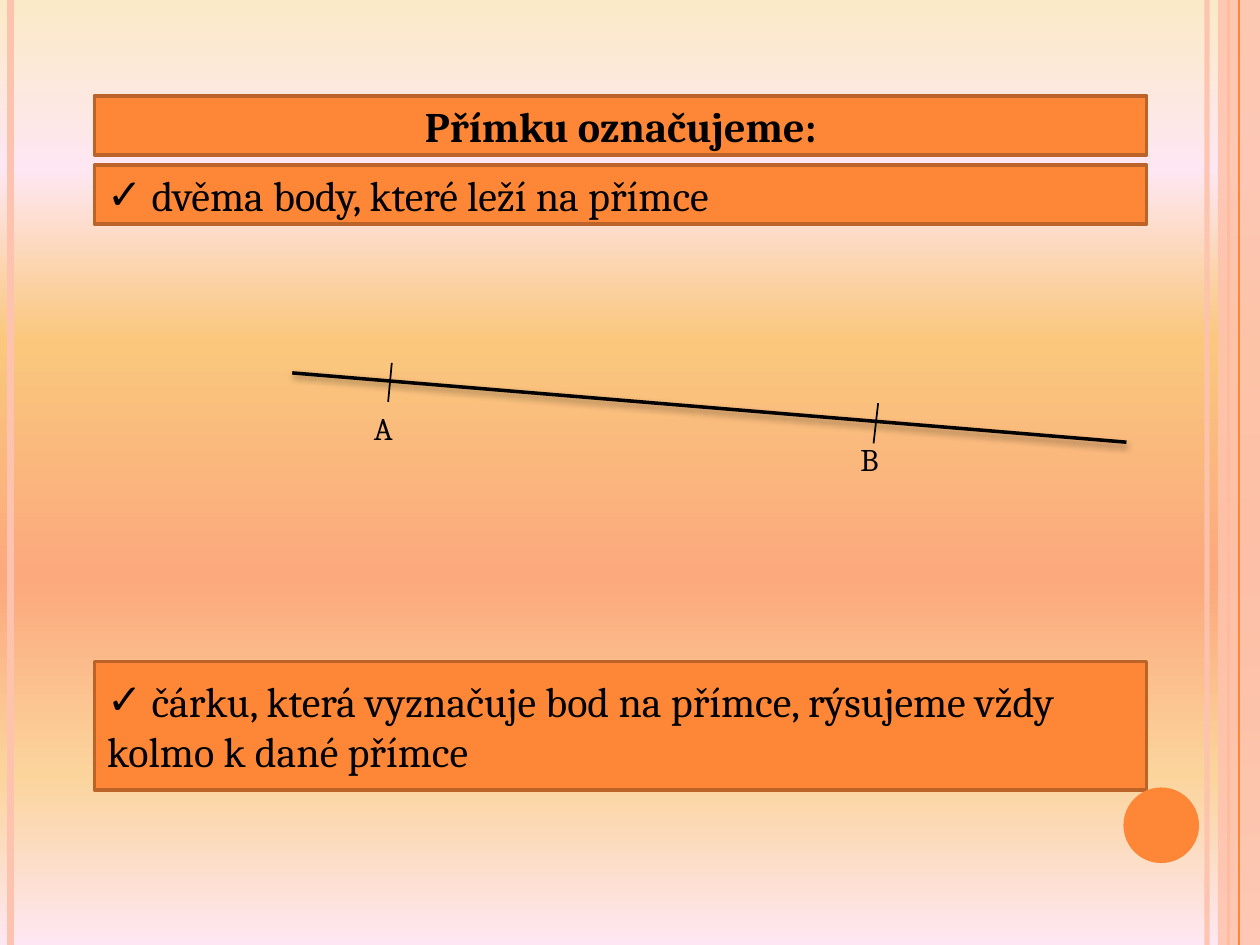
from dataclasses import dataclass

from lxml import etree
from pptx import Presentation
from pptx.dml.color import RGBColor
from pptx.enum import shapes, text
from pptx.oxml import ns
from pptx.util import Pt


@dataclass(frozen=True)
class Theme:
    font: str = "Cambria"
    heading_size: int = 24
    label_size: int = 18
    ink: str = "000000"
    accent: str = "FE8637"
    accent_dark: str = "BC6329"
    pale: str = "FEC3AE"
    # position in percent, colour, opacity in percent
    background: tuple = (
        (0, "FBEAC7", 100), (18, "FEE7F2", 100), (36, "FAC77D", 100),
        (61, "FBA97D", 100), (82, "FBD49C", 100), (100, "FEE7F2", 97),
    )


def add_xml(parent, tag, **attributes):
    values = {name: str(value) for name, value in attributes.items()}
    return etree.SubElement(parent, ns.qn(tag), values)


def add_colour(parent, colour, opacity=100):
    element = add_xml(parent, "a:srgbClr", val=colour)
    if opacity < 100:
        add_xml(element, "a:alpha", val=opacity * 1000)


def set_opacity(shape, opacity):
    if opacity < 100:
        for colour in shape.element.spPr.iter(ns.qn("a:srgbClr")):
            add_xml(colour, "a:alpha", val=opacity * 1000)


def write_text(frame, content, *, font, size, colour, bold=False,
               align=text.PP_ALIGN.LEFT, bullet=None):
    frame.text = content
    paragraph = frame.paragraphs[0]
    paragraph.alignment = align
    paragraph.space_before = Pt(0)
    style = paragraph.runs[0].font
    style.name, style.size, style.bold = font, Pt(size), bold
    style.color.rgb = RGBColor.from_string(colour)
    if bullet:
        properties = paragraph._p.get_or_add_pPr()
        properties.set("marL", "0")
        properties.set("indent", "0")
        add_xml(properties, "a:buClr").append(
            etree.Element(ns.qn("a:srgbClr"), val=colour))
        add_xml(properties, "a:buChar", char=bullet)


class SlideBuilder:
    def __init__(self, slide, theme):
        self.slide = slide
        self.theme = theme

    def background(self):
        fill = self.slide.background.fill
        fill.gradient()
        fill.gradient_angle = 270
        stops = self.slide.element.find(".//" + ns.qn("a:gsLst"))
        for stop in list(stops):
            stops.remove(stop)
        for position, colour, opacity in self.theme.background:
            stop = add_xml(stops, "a:gs", pos=position * 1000)
            add_colour(stop, colour, opacity)

    def line(self, start, end, colour, width, opacity=100, shadow=False):
        connector = self.slide.shapes.add_connector(
            shapes.MSO_CONNECTOR.STRAIGHT, *map(Pt, start + end))
        connector.line.color.rgb = RGBColor.from_string(colour)
        connector.line.width = Pt(width)
        set_opacity(connector, opacity)
        effects = add_xml(connector.element.spPr, "a:effectLst")
        if shadow:
            outer = add_xml(effects, "a:outerShdw", blurRad=Pt(4), dist=Pt(2),
                            dir=90 * 60000, rotWithShape=0)
            add_colour(outer, self.theme.ink, 40)

    def plain_shape(self, kind, box, colour, opacity=100):
        shape = self.slide.shapes.add_shape(kind, *map(Pt, box))
        shape.shadow.inherit = False
        shape.fill.solid()
        shape.fill.fore_color.rgb = RGBColor.from_string(colour)
        shape.line.fill.background()
        set_opacity(shape, opacity)

    def panel(self, placeholder, top, height, content, **text_format):
        """Turn a placeholder into a full-width framed box."""
        placeholder.left, placeholder.top = Pt(54), Pt(top)
        placeholder.width, placeholder.height = Pt(601.2), Pt(height)
        placeholder.fill.solid()
        placeholder.fill.fore_color.rgb = RGBColor.from_string(self.theme.accent)
        placeholder.line.color.rgb = RGBColor.from_string(self.theme.accent_dark)
        placeholder.line.width = Pt(2)
        frame = placeholder.text_frame
        frame.word_wrap = True
        frame.auto_size = text.MSO_AUTO_SIZE.NONE
        frame.vertical_anchor = text.MSO_ANCHOR.MIDDLE
        write_text(frame, content, font=self.theme.font, colour=self.theme.ink,
                   size=self.theme.heading_size, **text_format)

    def label(self, box, content):
        frame = self.slide.shapes.add_textbox(*map(Pt, box)).text_frame
        frame.word_wrap = True
        frame.auto_size = text.MSO_AUTO_SIZE.SHAPE_TO_FIT_TEXT
        write_text(frame, content, font=self.theme.font, colour=self.theme.ink,
                   size=self.theme.label_size)


def main():
    presentation = Presentation()
    presentation.slide_width, presentation.slide_height = Pt(720), Pt(540)
    slide = presentation.slides.add_slide(presentation.slide_layouts[3])
    theme = Theme()
    builder = SlideBuilder(slide, theme)
    builder.background()

    def edge_line(x, colour, width, opacity=100):
        builder.line((x, 0), (x, 540), colour, width, opacity)

    edge_line(689.8, theme.pale, 3, 93)
    edge_line(6, theme.pale, 4.5)
    edge_line(702, theme.accent, 1.5)
    builder.plain_shape(shapes.MSO_SHAPE.RECTANGLE, (696, 0, 24, 540), theme.pale, 87)
    edge_line(708, theme.accent, 0.75)
    builder.plain_shape(shapes.MSO_SHAPE.OVAL, (642, 450, 43.2, 43.2), theme.accent)

    title, naming_rule, drawing_rule = slide.placeholders
    builder.panel(title, 54.7, 33.8, "Přímku označujeme:",
                  bold=True, align=text.PP_ALIGN.CENTER)
    builder.panel(naming_rule, 94.3, 33.8,
                  " dvěma body, které leží na přímce", bullet="✓")
    builder.panel(drawing_rule, 378, 73.4,
                  " čárku, která vyznačuje bod na přímce, rýsujeme vždy "
                  "kolmo k dané přímce", bullet="✓")

    builder.line((167, 213.1), (643.7, 252.7), theme.ink, 2, shadow=True)
    points = (
        ("A", (223.9, 207.4), (221.8, 229.7), (206.6, 230.4, 33.8, 28.8)),
        ("B", (501.8, 230.4), (499.2, 253.4), (484.6, 247.7, 39.6, 28.8)),
    )
    for name, tick_top, tick_bottom, label_box in points:
        builder.line(tick_top, tick_bottom, theme.ink, 1)
        builder.label(label_box, name)

    presentation.save("out.pptx")


if __name__ == "__main__":
    main()
